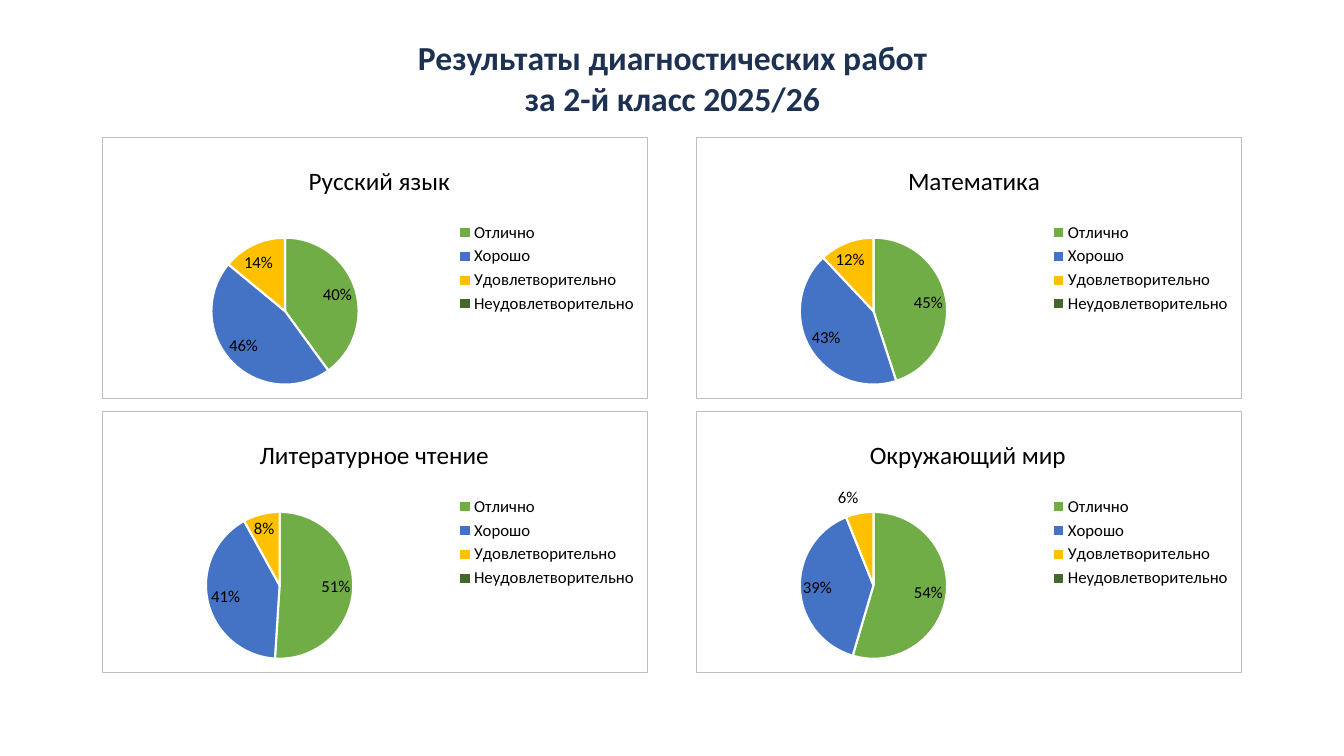
"""Build a slide with four pie charts of diagnostic test results."""
from lxml import etree
from pptx import Presentation
from pptx.chart.data import CategoryChartData
from pptx.dml.color import RGBColor
from pptx.enum.chart import XL_CHART_TYPE, XL_LABEL_POSITION as POS, XL_LEGEND_POSITION
from pptx.enum.text import MSO_AUTO_SIZE, PP_ALIGN
from pptx.oxml import parse_xml
from pptx.oxml.ns import nsdecls, qn
from pptx.util import Inches, Pt

FONT = "Calibri"
NAVY = RGBColor(0x1D, 0x31, 0x52)
BLACK = RGBColor(0x00, 0x00, 0x00)
WHITE = RGBColor(0xFF, 0xFF, 0xFF)
GREEN = RGBColor(0x70, 0xAD, 0x47)
BLUE = RGBColor(0x44, 0x72, 0xC4)
AMBER = RGBColor(0xFF, 0xC0, 0x00)
DARK_GREEN = RGBColor(0x43, 0x68, 0x2B)
BORDER = RGBColor(0xBF, 0xBF, 0xBF)

HEADING = ["Результаты диагностических работ", "за 2-й класс 2025/26"]
GRADES = {
    "Отлично": GREEN,
    "Хорошо": BLUE,
    "Удовлетворительно": AMBER,
    "Неудовлетворительно": DARK_GREEN,
}
PERCENT = '0"%"'
PERCENT_NO_ZERO = '0"%";;'
SUBJECTS = [
    ("Русский язык", (40, 46, 14, 0), PERCENT, 0.37, 0.2),
    ("Математика", (45, 43, 12, 0), PERCENT, 0.38, 0.19),
    ("Литературное чтение", (51, 41, 8, 0), PERCENT, 0.28, 0.19),
    ("Окружающий мир", (54, 39, 6, 0), PERCENT_NO_ZERO, 0.31, 0.19),
]


def set_layout(parent, index, **fractions):
    """Place a chart part by fractions of the chart area."""
    for old in parent.findall(qn("c:layout")):
        parent.remove(old)
    layout = etree.Element(qn("c:layout"))
    manual = etree.SubElement(layout, qn("c:manualLayout"))
    if "w" in fractions:
        etree.SubElement(manual, qn("c:layoutTarget"), val="inner")
    for mode in ("xMode", "yMode"):
        etree.SubElement(manual, qn(f"c:{mode}"), val="edge")
    for key, value in fractions.items():
        etree.SubElement(manual, qn(f"c:{key}"), val=str(value))
    parent.insert(index, layout)


def set_font(font, size, color):
    """Apply the slide typeface with a size and a colour."""
    font.name = FONT
    font.size = Pt(size)
    font.color.rgb = color


prs = Presentation()
prs.slide_width, prs.slide_height = Inches(13.33), Inches(7.5)
slide = prs.slides.add_slide(prs.slide_layouts[6])

tf = slide.shapes.add_textbox(Inches(2.92), Inches(0.32), Inches(7.5), Inches(0.91)).text_frame
tf.word_wrap = True
tf.auto_size = MSO_AUTO_SIZE.SHAPE_TO_FIT_TEXT
for i, line in enumerate(HEADING):
    p = tf.add_paragraph() if i else tf.paragraphs[0]
    p.alignment = PP_ALIGN.CENTER
    r = p.add_run()
    r.text = line
    r.font.bold = True
    set_font(r.font, 24, NAVY)

for i, (subject, shares, number_format, title_x, pie_x) in enumerate(SUBJECTS):
    row, col = divmod(i, 2)
    data = CategoryChartData()
    data.categories = list(GRADES)
    data.add_series("Series 1", shares)
    chart = slide.shapes.add_chart(
        XL_CHART_TYPE.PIE, Inches(1.01 + 5.89 * col), Inches(1.36 + 2.72 * row),
        Inches(5.42), Inches(2.6), data).chart
    set_font(chart.font, 10, BLACK)

    chart.has_title = True
    title = chart.chart_title
    title.include_in_layout = False
    r = title.text_frame.paragraphs[0].add_run()
    r.text = subject
    r.font.bold = False
    set_font(r.font, 18, BLACK)
    set_layout(title._element, 1, x=title_x, y=0.08)

    chart.has_legend = True
    chart.legend.position = XL_LEGEND_POSITION.RIGHT
    chart.legend.include_in_layout = False
    set_font(chart.legend.font, 12, BLACK)

    plot = chart.plots[0]
    plot.vary_by_categories = True
    set_layout(plot._element.getparent(), 0, x=pie_x, y=0.38, w=0.27, h=0.57)
    series = plot.series[0]
    for j, color in enumerate(GRADES.values()):
        fmt = series.points[j].format
        fmt.fill.solid()
        fmt.fill.fore_color.rgb = color
        fmt.line.color.rgb = WHITE
        fmt.line.width = Pt(1.5)

    labels = series.data_labels
    labels.show_value = True
    labels.show_percentage = False
    labels.number_format = number_format
    labels.number_format_is_linked = False
    labels.position = POS.BEST_FIT
    set_font(labels.font, 12, BLACK)

    frame = parse_xml(
        f'<c:spPr {nsdecls("c", "a")}><a:solidFill><a:srgbClr val="{WHITE}"/></a:solidFill>'
        f'<a:ln w="{Pt(0.75)}"><a:solidFill><a:srgbClr val="{BORDER}"/></a:solidFill></a:ln></c:spPr>')
    chart._chartSpace.find(qn("c:chart")).addnext(frame)

prs.save("out.pptx")
